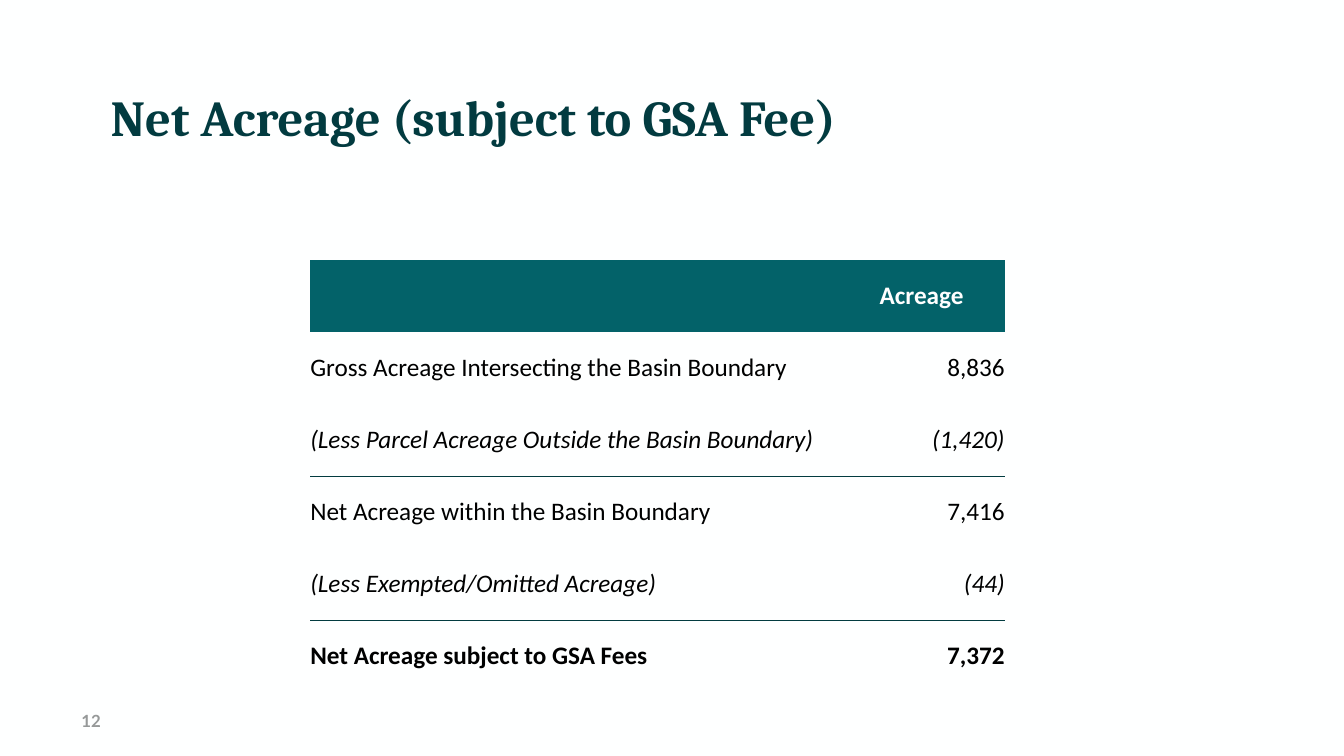
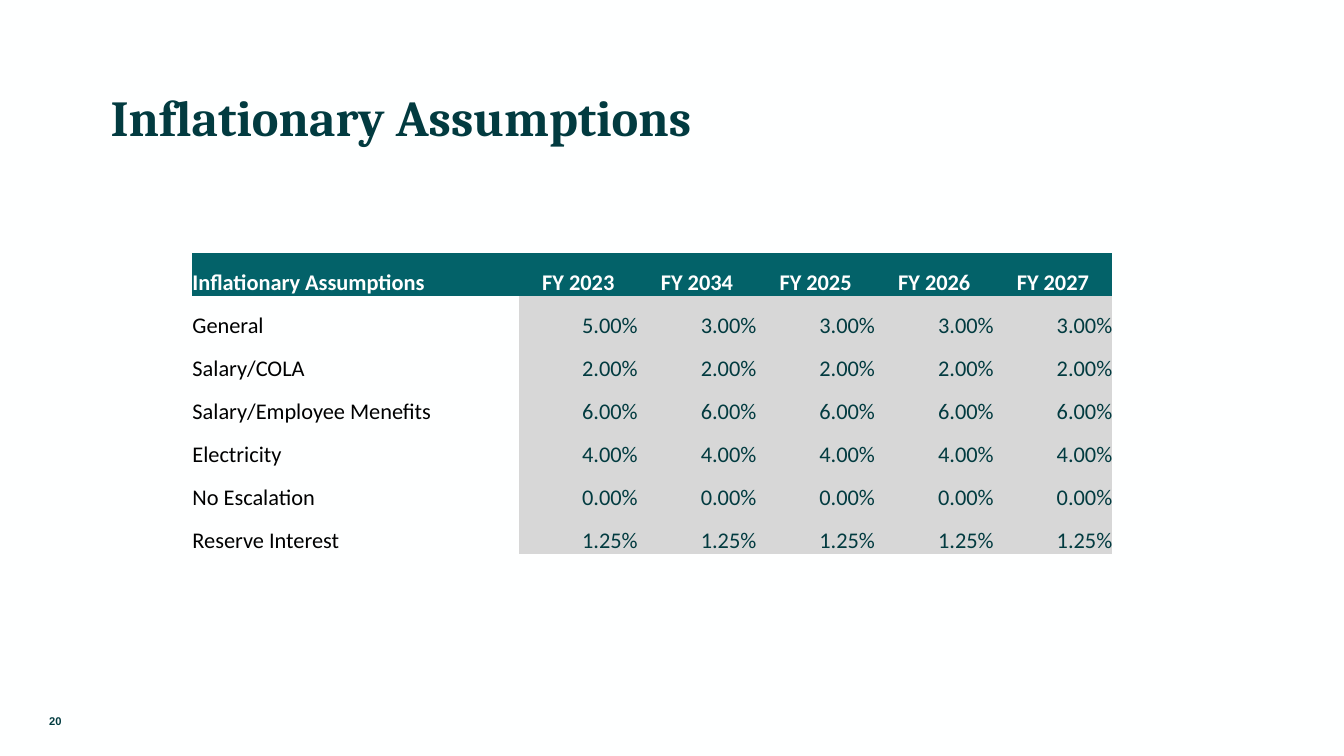
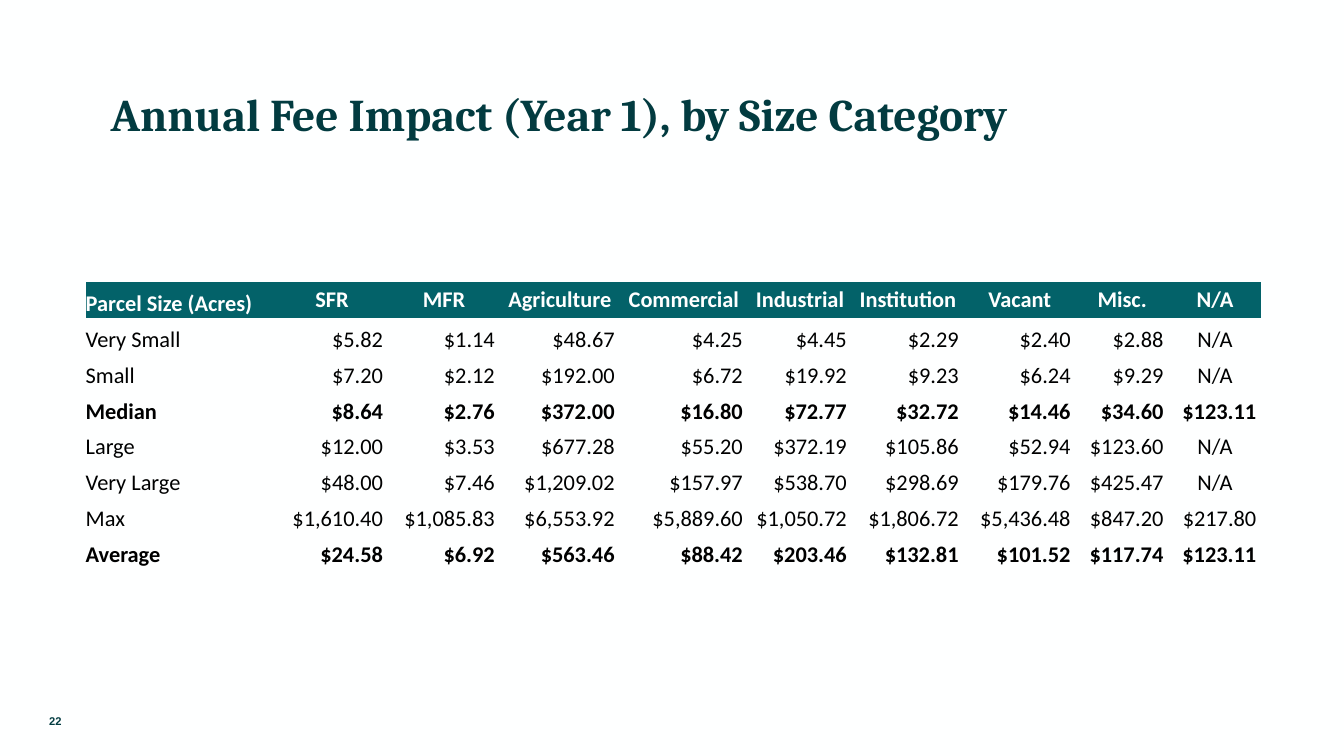
from dataclasses import dataclass

from lxml.etree import SubElement
from pptx import Presentation
from pptx.dml.color import RGBColor as Rgb
from pptx.enum.text import MSO_ANCHOR as Anchor, PP_ALIGN as Align
from pptx.oxml.ns import qn
from pptx.util import Cm, Pt


@dataclass(frozen=True)
class Theme:
    paper: str = "FEFFFF"
    ink: str = "023B40"
    header: str = "036269"
    header_text: str = "FFFFFF"
    body_text: str = "000000"
    shaded: str = "D7D7D7"
    muted: str = "969999"
    title_font: str = "Cambria"
    table_font: str = "Calibri"
    title_size: float = 36
    long_title_size: float = 32.4


THEME = Theme()
NO_GRID_STYLE = "{2D5ABB26-0587-4C30-8999-92F81FD0307C}"
LARGE_NUMBER = dict(font="Lato", size=12, color=THEME.muted, align=Align.RIGHT)
SMALL_NUMBER = dict(font="Arial", size=8, color=THEME.ink, align=Align.CENTER)

# Content: lengths in cm, the first row of each table is its header
SLIDES = [
    dict(
        title="Net Acreage (subject to GSA Fee)",
        title_size=THEME.title_size,
        number="12",
        number_style=LARGE_NUMBER,
        left=7.82, top=6.55, height=10.9,
        widths=[13.31, 4.19],
        size=18,
        header_anchor=Anchor.MIDDLE,
        body_anchor=Anchor.MIDDLE,
        italic_rows={2, 4}, ruled_rows={2, 4}, bold_rows={5},
        rows=[
            ("", "Acreage"),
            ("Gross Acreage Intersecting the Basin Boundary", "8,836"),
            ("(Less Parcel Acreage Outside the Basin Boundary)", "(1,420)"),
            ("Net Acreage within the Basin Boundary", "7,416"),
            ("(Less Exempted/Omitted Acreage)", "(44)"),
            ("Net Acreage subject to GSA Fees", "7,372"),
        ],
    ),
    dict(
        title="Inflationary Assumptions",
        title_size=THEME.title_size,
        number="20",
        number_style=SMALL_NUMBER,
        left=4.85, top=6.38, height=7.59,
        widths=[8.23] + [2.99] * 5,
        size=16,
        header_anchor=Anchor.BOTTOM,
        body_anchor=Anchor.BOTTOM,
        value_fill=THEME.shaded,
        value_color=THEME.ink,
        rows=[
            ("Inflationary Assumptions", "FY 2023", "FY 2034", "FY 2025", "FY 2026", "FY 2027"),
            ("General", "5.00%", *["3.00%"] * 4),
            ("Salary/COLA", *["2.00%"] * 5),
            ("Salary/Employee Menefits", *["6.00%"] * 5),
            ("Electricity", *["4.00%"] * 5),
            ("No Escalation", *["0.00%"] * 5),
            ("Reserve Interest", *["1.25%"] * 5),
        ],
    ),
    dict(
        title="Annual Fee Impact (Year 1), by Size Category",
        title_size=THEME.long_title_size,
        number="22",
        number_style=SMALL_NUMBER,
        left=2.16, top=7.11, height=7.21,
        widths=[4.8, 2.82, 2.82, 3.02, 3.23, 2.62, 2.82, 2.82, 2.34, 2.34],
        size=16,
        header_anchor=Anchor.MIDDLE,
        body_anchor=Anchor.BOTTOM,
        value_indent=0.13,
        bold_rows={3, 7},
        rows=[
            ("Parcel Size (Acres)", "SFR", "MFR", "Agriculture", "Commercial",
             "Industrial", "Institution", "Vacant", "Misc.", "N/A"),
            ("Very Small", "$5.82", "$1.14", "$48.67", "$4.25",
             "$4.45", "$2.29", "$2.40", "$2.88", "N/A"),
            ("Small", "$7.20", "$2.12", "$192.00", "$6.72",
             "$19.92", "$9.23", "$6.24", "$9.29", "N/A"),
            ("Median", "$8.64", "$2.76", "$372.00", "$16.80",
             "$72.77", "$32.72", "$14.46", "$34.60", "$123.11"),
            ("Large", "$12.00", "$3.53", "$677.28", "$55.20",
             "$372.19", "$105.86", "$52.94", "$123.60", "N/A"),
            ("Very Large", "$48.00", "$7.46", "$1,209.02", "$157.97",
             "$538.70", "$298.69", "$179.76", "$425.47", "N/A"),
            ("Max", "$1,610.40", "$1,085.83", "$6,553.92", "$5,889.60",
             "$1,050.72", "$1,806.72", "$5,436.48", "$847.20", "$217.80"),
            ("Average", "$24.58", "$6.92", "$563.46", "$88.42",
             "$203.46", "$132.81", "$101.52", "$117.74", "$123.11"),
        ],
    ),
]


def style_text(frame, text, font, size, color, align, bold=True, italic=False):
    frame.text = text
    paragraph = frame.paragraphs[0]
    paragraph.alignment = align
    for run in paragraph.runs:
        run.font.name, run.font.size = font, Pt(size)
        run.font.bold, run.font.italic = bold, italic
        run.font.color.rgb = Rgb.from_string(color)


# Title and slide number
def add_title(slide, text, size):
    frame = slide.shapes.add_textbox(Cm(2.79), Cm(1.63), Cm(28.27), Cm(3.48)).text_frame
    frame.word_wrap = True
    frame.margin_left = frame.margin_right = frame.margin_bottom = 0
    frame.margin_top = Cm(0.53)
    style_text(frame, text, THEME.title_font, size, THEME.ink, Align.LEFT)


def add_number(slide, text, style):
    frame = slide.shapes.add_textbox(0, Cm(17.65), Cm(2.79), Cm(1.02)).text_frame
    frame.word_wrap = True
    frame.vertical_anchor = Anchor.MIDDLE
    style_text(frame, text, **style)


# Tables
def rule_below(cell):
    line = SubElement(cell._tc.get_or_add_tcPr(), qn("a:lnB"), w=str(Pt(1)))
    fill = SubElement(line, qn("a:solidFill"))
    SubElement(fill, qn("a:srgbClr"), val=THEME.ink)


def set_fill(cell, color):
    if color:
        cell.fill.solid()
        cell.fill.fore_color.rgb = Rgb.from_string(color)
    else:
        cell.fill.background()


def fill_cell(cell, text, row, column, content):
    is_header, is_label = row == 0, column == 0
    cell.margin_left = cell.margin_right = cell.margin_top = cell.margin_bottom = 0
    if row in content.get("ruled_rows", ()):
        rule_below(cell)

    if is_header:
        fill, color = THEME.header, THEME.header_text
    elif is_label:
        fill, color = None, THEME.body_text
    else:
        fill = content.get("value_fill")
        color = content.get("value_color", THEME.body_text)
    set_fill(cell, fill)

    if is_label:
        align = Align.LEFT
    elif is_header or text == "N/A":
        align = Align.CENTER
    else:
        align = Align.RIGHT
        cell.margin_right = Cm(content.get("value_indent", 0))

    label_header = is_header and is_label
    at_head = is_header and not label_header
    cell.vertical_anchor = content["header_anchor" if at_head else "body_anchor"]
    style_text(cell.text_frame, text, THEME.table_font, content["size"], color, align,
               bold=is_header or row in content.get("bold_rows", ()),
               italic=row in content.get("italic_rows", ()))


def add_data_table(slide, content):
    rows, widths = content["rows"], content["widths"]
    frame = slide.shapes.add_table(len(rows), len(widths), Cm(content["left"]), Cm(content["top"]),
                                   Cm(sum(widths)), Cm(content["height"]))
    frame.element.find(".//" + qn("a:tableStyleId")).text = NO_GRID_STYLE
    table = frame.table
    table.first_row = table.horz_banding = False
    for column, width in zip(table.columns, widths):
        column.width = Cm(width)
    for r, texts in enumerate(rows):
        for c, text in enumerate(texts):
            fill_cell(table.cell(r, c), text, r, c, content)


def main():
    deck = Presentation()
    deck.slide_width, deck.slide_height = Cm(33.87), Cm(19.05)
    paper = deck.slide_master.background.fill
    paper.solid()
    paper.fore_color.rgb = Rgb.from_string(THEME.paper)
    for content in SLIDES:
        slide = deck.slides.add_slide(deck.slide_layouts[6])
        add_title(slide, content["title"], content["title_size"])
        add_number(slide, content["number"], content["number_style"])
        add_data_table(slide, content)
    deck.save("out.pptx")


if __name__ == "__main__":
    main()
